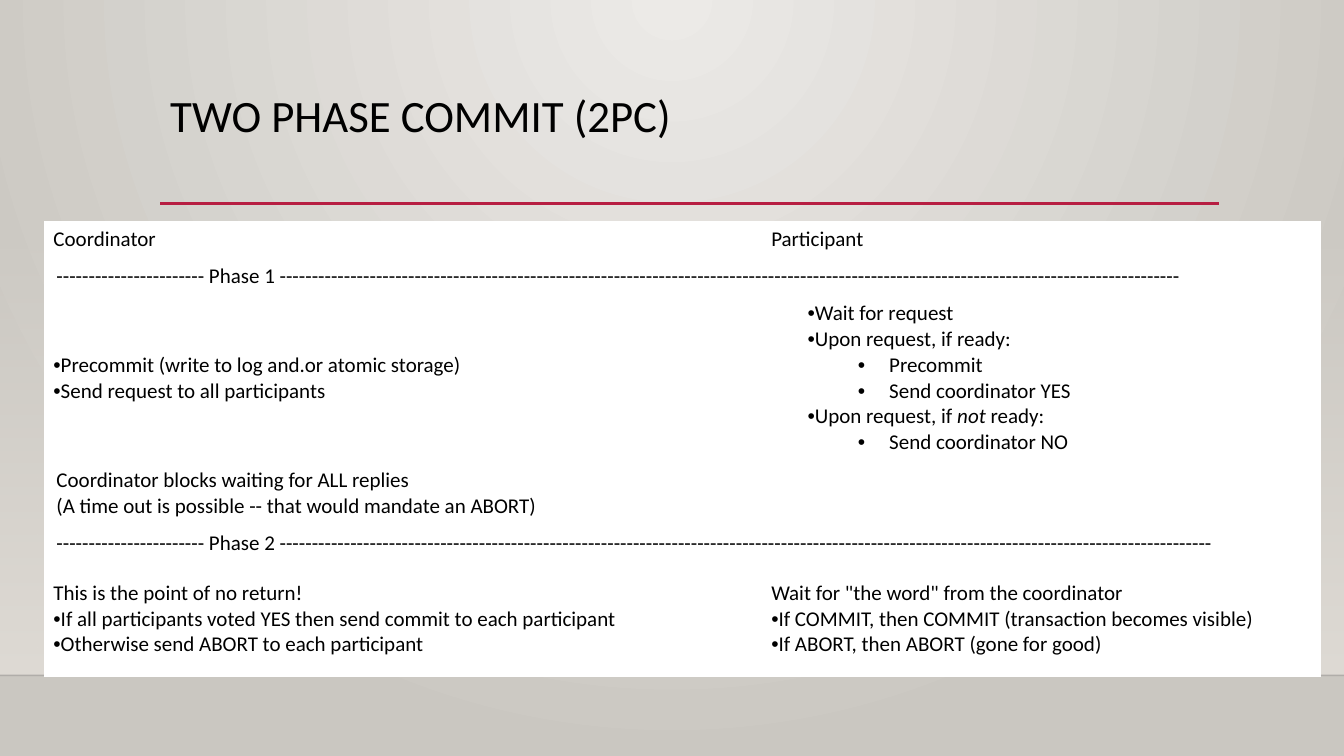
from lxml import etree
from pptx import Presentation
from pptx.dml.color import RGBColor
from pptx.enum import shapes, text
from pptx.oxml.ns import qn
from pptx.util import Inches, Pt

BLACK, WHITE, RED = "000000", "FFFFFF", "B71E42"


def color(code):
    return RGBColor.from_string(code)


def sub(node, tag, **attrs):
    return etree.SubElement(node, qn(tag), attrs)


def fade(fill, first, last):
    fill.gradient()
    for stop, code in zip(fill.gradient_stops, (first, last)):
        stop.color.rgb = color(code)


def clear(node, code, part):
    """Set the opacity, in percent, of a colour inside a node."""
    for item in node.xpath(f".//a:srgbClr[@val='{code}']")[:1]:
        sub(item, "a:alpha", val=str(part * 1000))


def write(para, words, size=15, code=BLACK, bullet=False, level=0):
    """Fill a paragraph; *stars* mark italics and a newline breaks the line."""
    if bullet:
        props = para._p.get_or_add_pPr()
        left, hang = (0.81, -0.31) if level else (0, 0)
        props.set("marL", str(Inches(left)))
        props.set("indent", str(Inches(hang)))
        sub(props, "a:buFont", typeface="Arial")
        sub(props, "a:buChar", char="•")
        para.level = level
    for row, line in enumerate(words.split("\n")):
        if row:
            para.add_line_break()
        for spot, piece in enumerate(line.split("*")):
            run = para.add_run()
            run.text = piece
            run.font.name, run.font.size = "Calibri", Pt(size)
            run.font.color.rgb = color(code)
            if spot % 2:
                run.font.italic = True
    # Breaks take the size of the text around them
    para.font.size = Pt(size)


def rule(slide, x, y, w, code, width, part=100):
    line = slide.shapes.add_connector(
        shapes.MSO_CONNECTOR.STRAIGHT,
        Inches(x), Inches(y), Inches(x + w), Inches(y))
    line.line.color.rgb = color(code)
    line.line.width = Pt(width)
    if part < 100:
        clear(line._element, code, part)
    sub(line._element.spPr, "a:effectLst")


def scene(slide, w, top, floor):
    # Glow from the middle of the top edge
    fade(slide.background.fill, "ECEAE7", "CAC7C1")
    grad = slide._element.xpath(".//p:bg//a:gradFill")[0]
    grad.remove(grad.find(qn("a:lin")))
    glow = sub(grad, "a:path", path="circle")
    sub(glow, "a:fillToRect", l="43000", t="0", r="43000", b="100000")
    # Wall that fades in towards the floor line
    wall = slide.shapes.add_shape(
        shapes.MSO_SHAPE.RECTANGLE,
        0, Inches(top), Inches(w), Inches(floor - top))
    wall.shadow.inherit = False
    wall.line.fill.background()
    fade(wall.fill, "DFDBD5", "DFDBD5")
    wall.fill.gradient_angle = 270
    clear(wall._element, "DFDBD5", 0)
    rule(slide, 0, floor, w, "000001", 1, 20)


def title(slide, x, y, w, h, words):
    box = slide.shapes.add_textbox(Inches(x), Inches(y), Inches(w), Inches(h))
    box.text_frame.word_wrap = True
    para = box.text_frame.paragraphs[0]
    write(para, words, size=32)
    para.line_spacing = 0.9
    rule(slide, x, y + 1.14, w, RED, 2.5)


def fill(cell, lines, wide):
    """Fill a cell; "- " starts a bullet and "-- " one a level below."""
    cell.vertical_anchor = text.MSO_ANCHOR.MIDDLE
    cell.margin_left = cell.margin_right = Inches(0.12 if wide else 0.09)
    cell.margin_top = cell.margin_bottom = Inches(0.06 if wide else 0.04)
    frame = cell.text_frame
    for spot, line in enumerate(lines):
        para = frame.add_paragraph() if spot else frame.paragraphs[0]
        mark, gap, rest = line.partition(" ")
        if mark in ("-", "--"):
            write(para, rest, bullet=True, level=len(mark) - 1)
        else:
            write(para, line)


def phase(num, count):
    return ["-" * 23 + f" Phase {num} " + "-" * count]


# Each row: height, then the lines of each cell by its first column
ROWS = [
    (0.35, {0: ["Coordinator"], 1: ["Participant"]}),
    (0.37, {0: phase(1, 140)}),
    (1.66, {0: ["- Precommit (write to log and.or atomic storage)",
                "- Send request to all participants"],
            2: ["- Wait for request",
                "- Upon request, if ready:",
                "-- Precommit",
                "-- Send coordinator YES",
                "- Upon request, if *not* ready:",
                "-- Send coordinator NO"]}),
    (0.61, {0: ["Coordinator blocks waiting for ALL replies\n"
                "(A time out is possible -- that would mandate an ABORT)"]}),
    (0.37, {0: phase(2, 145)}),
    (1.14, {0: ["This is the point of no return!",
                "- If all participants voted YES then send commit"
                " to each participant",
                "- Otherwise send ABORT to each participant"],
            1: ['Wait for "the word" from the coordinator',
                "- If COMMIT, then COMMIT (transaction becomes visible)",
                "- If ABORT, then ABORT (gone for good)"]}),
]


def steps(slide, x, y, w, rows):
    cols = [7.12, 0.36, w - 7.48]
    high = sum(row[0] for row in rows)
    grid = slide.shapes.add_table(
        len(rows), len(cols),
        Inches(x), Inches(y), Inches(w), Inches(high)).table
    grid.first_row = grid.horz_banding = False
    for col, width in zip(grid.columns, cols):
        col.width = Inches(width)
    for r, (height, cells) in enumerate(rows):
        grid.rows[r].height = Inches(height)
        for c in range(len(cols)):
            grid.cell(r, c).fill.solid()
            grid.cell(r, c).fill.fore_color.rgb = color(WHITE)
        # A cell reaches to the next one or to the edge
        ends = list(cells)[1:] + [len(cols)]
        for (c, lines), end in zip(cells.items(), ends):
            if end - c > 1:
                grid.cell(r, c).merge(grid.cell(r, end - 1))
            fill(grid.cell(r, c), lines, wide=len(cells) == 1)


def main():
    deck = Presentation()
    deck.slide_width, deck.slide_height = Inches(13.33), Inches(7.5)
    slide = deck.slides.add_slide(deck.slide_layouts[6])
    scene(slide, 13.33, 2.21, 6.7)
    title(slide, 1.59, 0.88, 10.5, 1.15, "TWO PHASE COMMIT (2PC)")
    steps(slide, 0.44, 2.2, 12.66, ROWS)
    deck.save("out.pptx")


if __name__ == "__main__":
    main()
